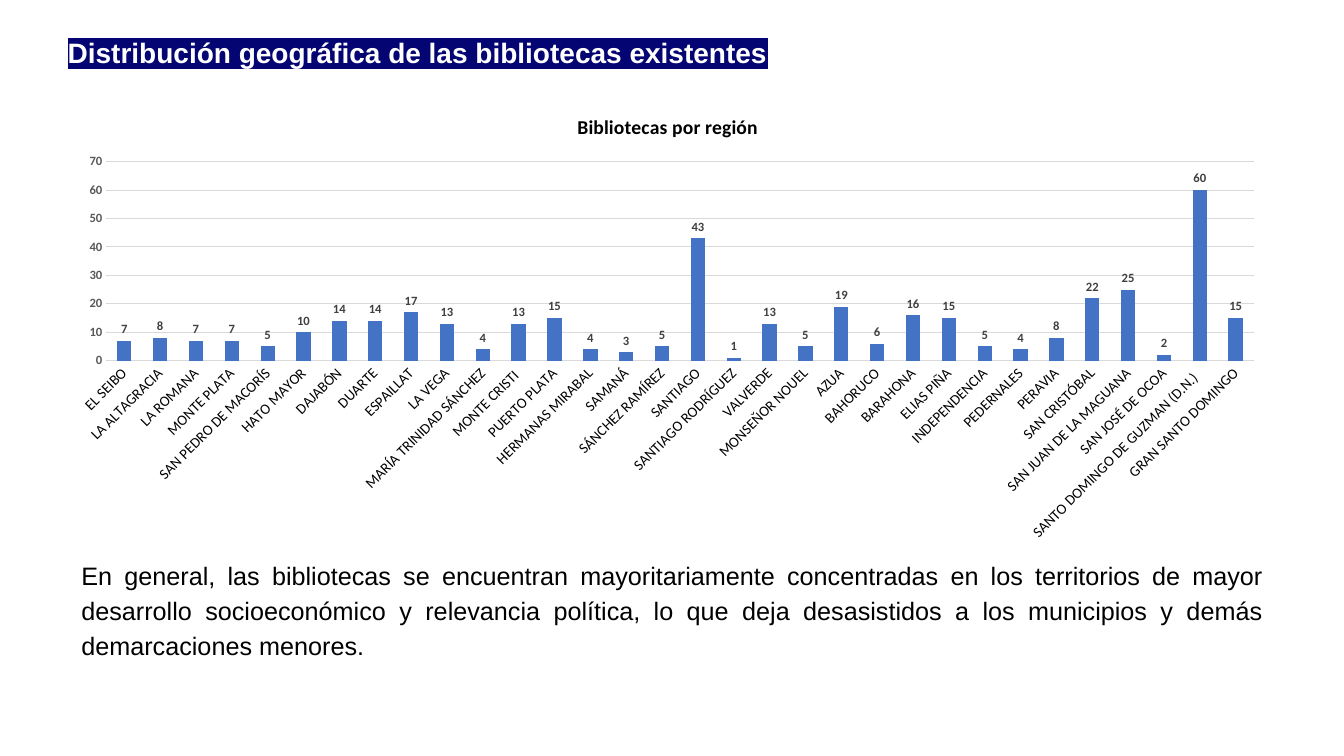
import pptx
import pptx.chart.data
import pptx.dml.color
import pptx.enum.chart
import pptx.enum.text
import pptx.oxml
import pptx.oxml.ns
import pptx.util
from pptx.dml.color import RGBColor
from pptx.util import Cm, Pt

HEADING = "Distribución geográfica de las bibliotecas existentes"
CHART_TITLE = "Bibliotecas por región"
LIBRARIES = {
    "EL SEIBO": 7, "LA ALTAGRACIA": 8, "LA ROMANA": 7, "MONTE PLATA": 7,
    "SAN PEDRO DE MACORÍS": 5, "HATO MAYOR": 10, "DAJABÓN": 14, "DUARTE": 14,
    "ESPAILLAT": 17, "LA VEGA": 13, "MARÍA TRINIDAD SÁNCHEZ": 4,
    "MONTE CRISTI ": 13, "PUERTO PLATA": 15, "HERMANAS MIRABAL": 4,
    "SAMANÁ": 3, "SÁNCHEZ RAMÍREZ": 5, "SANTIAGO": 43,
    "SANTIAGO RODRÍGUEZ": 1, "VALVERDE": 13, "MONSEŇOR NOUEL": 5, "AZUA": 19,
    "BAHORUCO": 6, "BARAHONA": 16, "ELIAS PIÑA": 15, "INDEPENDENCIA": 5,
    "PEDERNALES": 4, "PERAVIA": 8, "SAN CRISTÓBAL": 22,
    "SAN JUAN DE LA MAGUANA": 25, "SAN JOSÉ DE OCOA": 2,
    "SANTO DOMINGO DE GUZMAN (D.N.)  ": 60, "GRAN SANTO DOMINGO": 15,
}
CONCLUSION = (
    "En general, las bibliotecas se encuentran mayoritariamente concentradas "
    "en los territorios de mayor desarrollo socioeconómico y relevancia "
    "política, lo que deja desasistidos a los municipios y demás "
    "demarcaciones menores."
)
PLOT_AREA = {"x": 0.04, "y": 0.145, "w": 0.94, "h": 0.437}

WHITE = RGBColor(0xFF, 0xFF, 0xFF)
BLACK = RGBColor(0, 0, 0)
NAVY = RGBColor(0x04, 0x04, 0x72)
BLUE = RGBColor(0x44, 0x72, 0xC4)
GRID_GREY = RGBColor(0xD9, 0xD9, 0xD9)
AXIS_GREY = RGBColor(0x59, 0x59, 0x59)
LABEL_GREY = RGBColor(0x40, 0x40, 0x40)


def style(font, name, size, color, bold=False):
    font.name, font.size, font.bold = name, Pt(size), bold
    font.color.rgb = color


def write_paragraph(shape, text, size, color, bold=False):
    """Fill a shape with one justified Arial paragraph and return it."""
    frame = shape.text_frame
    frame.text = text
    frame.word_wrap = True
    frame.auto_size = pptx.enum.text.MSO_AUTO_SIZE.SHAPE_TO_FIT_TEXT
    frame.vertical_anchor = pptx.enum.text.MSO_ANCHOR.TOP
    paragraph = frame.paragraphs[0]
    paragraph.alignment = pptx.enum.text.PP_ALIGN.JUSTIFY
    style(paragraph.runs[0].font, "Arial", size, color, bold)
    return paragraph


def highlight(run, color):
    mark = pptx.oxml.parse_xml(
        f'<a:highlight {pptx.oxml.ns.nsdecls("a")}>'
        f'<a:srgbClr val="{color}"/></a:highlight>')
    fill = run._r.get_or_add_rPr().find(pptx.oxml.ns.qn("a:solidFill"))
    fill.addnext(mark)


def place_plot_area(chart):
    """Fix the inner plot area as fractions of the chart."""
    modes = '<c:layoutTarget val="inner"/><c:xMode val="edge"/><c:yMode val="edge"/>'
    sizes = "".join(f'<c:{key} val="{part}"/>' for key, part in PLOT_AREA.items())
    layout = pptx.oxml.parse_xml(
        f'<c:layout {pptx.oxml.ns.nsdecls("c")}>'
        f'<c:manualLayout>{modes}{sizes}</c:manualLayout></c:layout>')
    area = chart._chartSpace.chart.plotArea
    for old in area.findall(pptx.oxml.ns.qn("c:layout")):
        area.remove(old)
    area.insert(0, layout)


def add_library_chart(slide):
    data = pptx.chart.data.CategoryChartData()
    data.categories = list(LIBRARIES)
    data.add_series("Bibliotecas", list(LIBRARIES.values()))
    chart = slide.shapes.add_chart(
        pptx.enum.chart.XL_CHART_TYPE.COLUMN_CLUSTERED,
        Cm(1.45), Cm(2.41), Cm(30.76), Cm(11.48), data).chart
    style(chart.font, "Calibri", 10, BLACK)
    chart.has_legend = False
    chart.has_title = True
    chart.chart_title.include_in_layout = False
    caption = chart.chart_title.text_frame
    caption.text = CHART_TITLE
    style(caption.paragraphs[0].runs[0].font, "Calibri", 14, BLACK, True)
    place_plot_area(chart)

    provinces, counts = chart.category_axis, chart.value_axis
    for axis in (provinces, counts):
        axis.major_tick_mark = pptx.enum.chart.XL_TICK_MARK.NONE
        axis.format.line.fill.background()
    style(provinces.tick_labels.font, "Calibri", 10.5, BLACK)
    provinces._element.txPr.bodyPr.set("rot", "-2700000")
    style(counts.tick_labels.font, "Calibri", 9, AXIS_GREY, True)
    counts.minimum_scale, counts.maximum_scale, counts.major_unit = 0, 70, 10
    grid = counts.major_gridlines.format.line
    grid.color.rgb, grid.width = GRID_GREY, Pt(0.75)

    plot = chart.plots[0]
    plot.gap_width, plot.vary_by_categories = 150, False
    columns = plot.series[0]
    columns.format.fill.solid()
    columns.format.fill.fore_color.rgb = BLUE
    labels = columns.data_labels
    labels.show_value = True
    labels.position = pptx.enum.chart.XL_LABEL_POSITION.OUTSIDE_END
    style(labels.font, "Calibri", 9, LABEL_GREY, True)


def main():
    deck = pptx.Presentation()
    deck.slide_width, deck.slide_height = Cm(33.87), Cm(19.05)
    slide = deck.slides.add_slide(deck.slide_layouts[5])

    heading = slide.shapes.title
    heading.left, heading.top = Cm(1.45), Cm(0.76)
    heading.width, heading.height = Cm(32.82), Cm(1.12)
    highlight(write_paragraph(heading, HEADING, 20, WHITE, True).runs[0], NAVY)

    add_library_chart(slide)

    conclusion = slide.shapes.add_textbox(Cm(1.8), Cm(13.89), Cm(30.28), Cm(2.84))
    paragraph = write_paragraph(conclusion, CONCLUSION, 18, BLACK)
    paragraph.line_spacing, paragraph.space_after = 1.15, Pt(8)

    deck.save("out.pptx")


if __name__ == "__main__":
    main()
